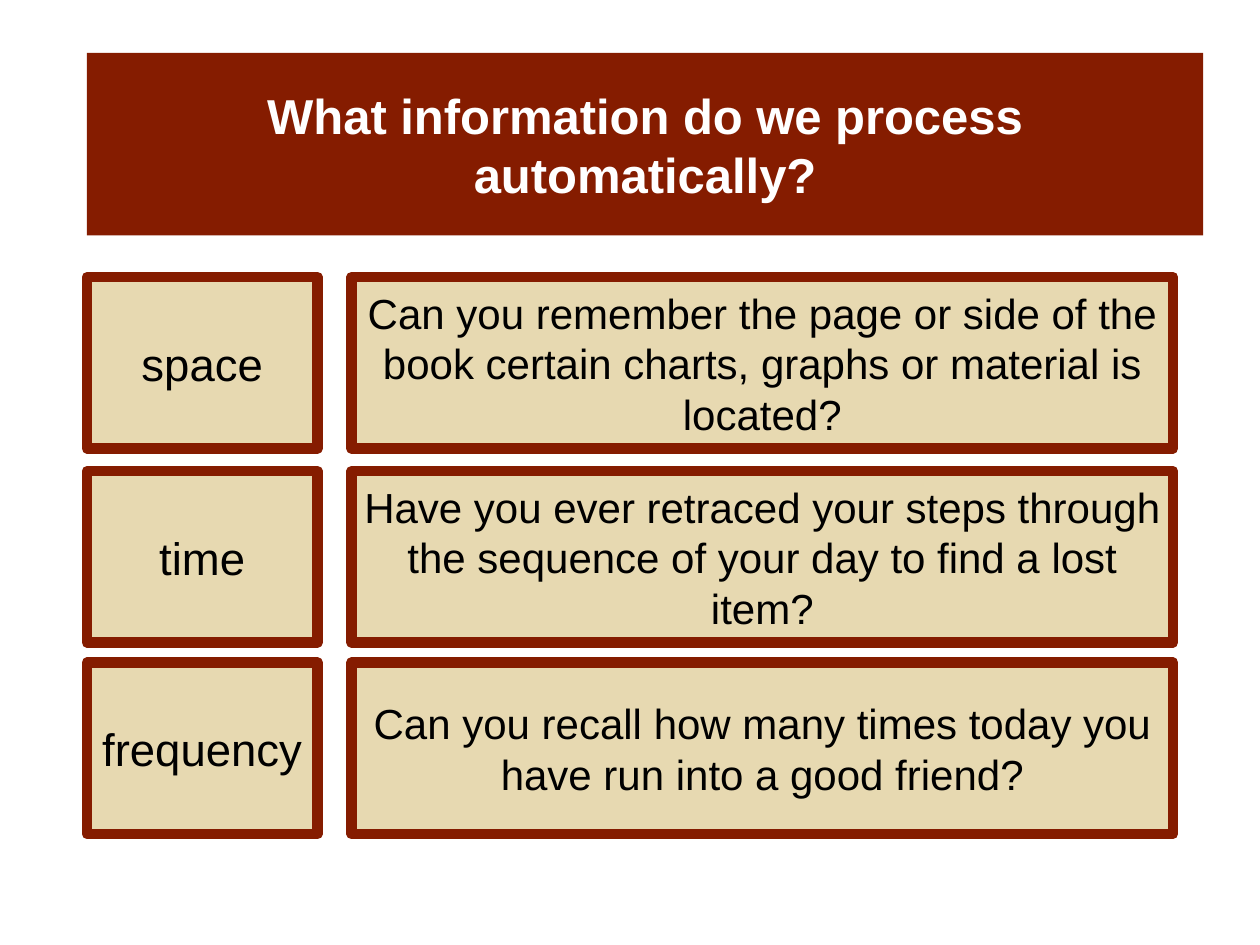
from pptx import Presentation
from pptx.dml.color import RGBColor
from pptx.enum import shapes, text
from pptx.util import Pt

RED = RGBColor(0x85, 0x1C, 0x00)
SAND = RGBColor(0xE7, 0xD9, 0xB1)
WHITE = RGBColor(0xFF, 0xFF, 0xFF)
BLACK = RGBColor(0, 0, 0)

TITLE = "What information do we process automatically?"
ROWS = [
    (158.4, "space", "Can you remember the page or side of the book "
     "certain charts, graphs or material is located?"),
    (269.3, "time", "Have you ever retraced your steps through the "
     "sequence of your day to find a lost item?"),
    (378.7, "frequency", "Can you recall how many times today you have "
     "run into a good friend?"),
]
LEFT = 49.7
TERM_W, GAP, ASK_W, ROW_H = 131.8, 19.4, 469.4, 97.9


def add_box(slide, box, words, fill, edge=None, **font):
    shape = slide.shapes.add_shape(
        shapes.MSO_SHAPE.RECTANGLE, *(Pt(n) for n in box))
    shape.shadow.inherit = False
    shape.fill.solid()
    shape.fill.fore_color.rgb = fill
    if edge is None:
        shape.line.fill.background()
    else:
        shape.line.color.rgb = edge
        shape.line.width = Pt(6)
    frame = shape.text_frame
    look = dict(word_wrap=True, vertical_anchor=text.MSO_ANCHOR.MIDDLE,
                margin_left=Pt(6), margin_right=Pt(6))
    for key, value in look.items():
        setattr(frame, key, value)
    par = frame.paragraphs[0]
    par.alignment = text.PP_ALIGN.CENTER
    run = par.add_run()
    run.text = words
    run.font.color.rgb = font.pop("color")
    for key, value in dict(name="Arial", **font).items():
        setattr(run.font, key, value)


def add_title(slide, box):
    add_box(slide, box, TITLE, RED, color=WHITE, size=Pt(28), bold=True)


def add_row(slide, box, term, ask):
    """Place a term and, to its right, the question that goes with it."""
    x, y, w, h = box
    shift = TERM_W + GAP
    add_box(slide, (x, y, TERM_W, h), term, SAND, RED,
            color=BLACK, size=Pt(26))
    add_box(slide, (x + shift, y, w - shift, h), ask, SAND, RED,
            color=BLACK, size=Pt(24))


def main():
    deck = Presentation()
    deck.slide_width, deck.slide_height = Pt(720), Pt(540)
    slide = deck.slides.add_slide(deck.slide_layouts[6])
    add_title(slide, (LEFT, 30.2, 637.9, 104.4))
    for top, term, ask in ROWS:
        add_row(slide, (LEFT, top, TERM_W + GAP + ASK_W, ROW_H), term, ask)
    deck.save("out.pptx")


if __name__ == "__main__":
    main()
